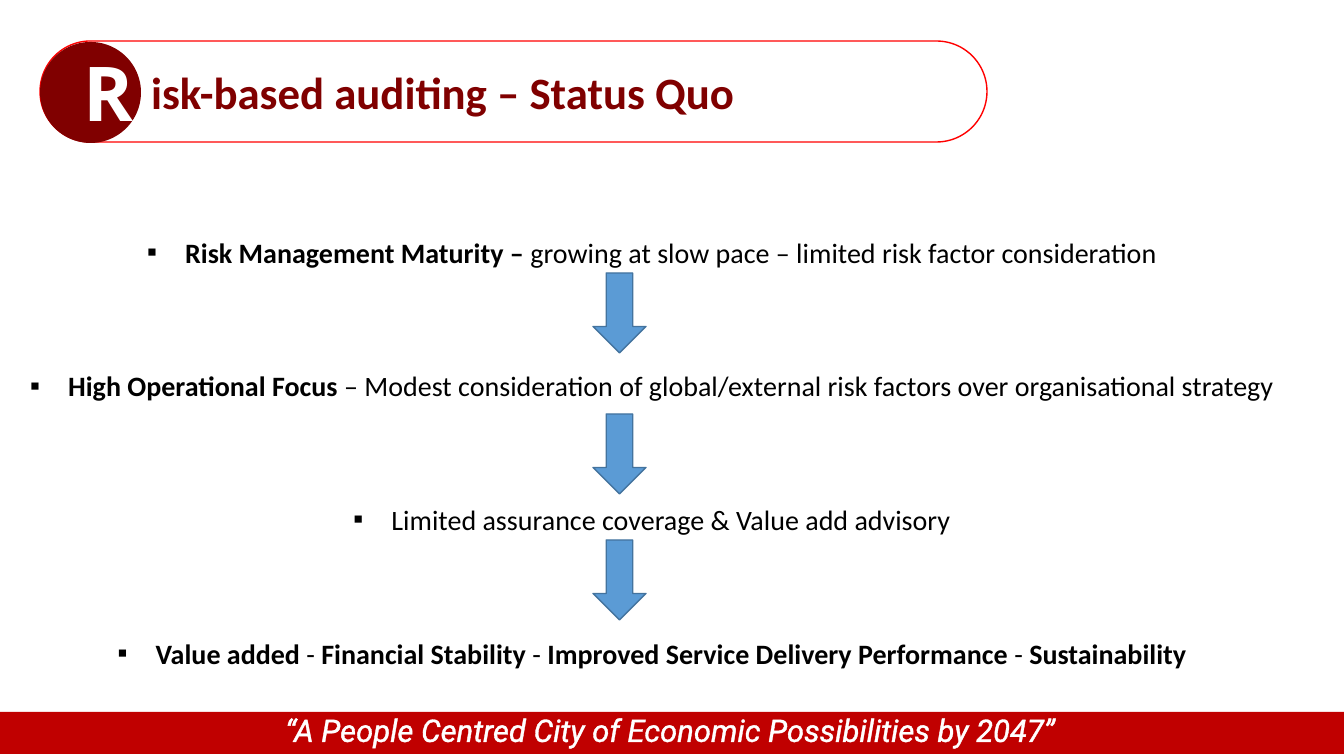
from lxml.etree import SubElement
from pptx import Presentation
from pptx.dml.color import RGBColor
from pptx.enum.shapes import MSO_SHAPE as Shape
from pptx.enum.text import MSO_ANCHOR as Anchor, MSO_AUTO_SIZE as Fit, PP_ALIGN as Align
from pptx.oxml import parse_xml
from pptx.oxml.ns import nsdecls, qn
from pptx.util import Pt

MAROON = RGBColor(0x80, 0, 0)
RED = RGBColor(0xFF, 0, 0)
BAND = RGBColor(0xC0, 0, 0)
BLUE = RGBColor(0x5B, 0x9B, 0xD5)
NAVY = RGBColor(0x43, 0x73, 0x9E)
WHITE = RGBColor(0xFF, 0xFF, 0xFF)
BLACK = RGBColor(0, 0, 0)


def px(*vals):
    return [round(v * 914400 / 100.8) for v in vals]


def draw(kind, box, fill=None, line=None):
    item = slide.shapes.add_shape(kind, *px(*box))
    item.shadow.inherit = False
    if fill is None:
        item.fill.background()
    else:
        item.fill.solid()
        item.fill.fore_color.rgb = fill
    if line is None:
        item.line.fill.background()
    else:
        item.line.color.rgb = line
        item.line.width = Pt(1)
    return item


deck = Presentation()
deck.slide_width, deck.slide_height = px(1344, 756)
slide = deck.slides.add_slide(deck.slide_layouts[1])
title, body = slide.placeholders

# Title pill with its initial
pill = draw(Shape.ROUNDED_RECTANGLE, (40, 41, 947, 101), line=RED)
pill.adjustments[0] = 0.5
draw(Shape.OVAL, (40, 42, 101, 101), fill=MAROON)
cap = slide.shapes.add_textbox(*px(74, 41, 52, 102)).text_frame
cap.word_wrap = True
cap.text = "R"
font = cap.paragraphs[0].font
font.name, font.size, font.bold = "Open Sans", Pt(54), True
font.color.rgb = WHITE

title.left, title.top, title.width, title.height = px(141, 59, 831, 65)
head = title.text_frame
head.auto_size = Fit.NONE
head.vertical_anchor = Anchor.MIDDLE
head.text = "isk-based auditing – Status Quo"
para = head.paragraphs[0]
para.alignment = Align.LEFT
font = para.font
font.name, font.size, font.bold = "Calibri", Pt(32), True
font.color.rgb = MAROON

# Steps: each is a list of (text, bold) runs
steps = [
    [("Risk Management Maturity – ", True),
     ("growing at slow pace – limited risk factor consideration", False)],
    [("High Operational Focus ", True),
     ("– Modest consideration of global/external risk factors "
      "over organisational strategy", False)],
    [("Limited assurance coverage & Value add advisory", False)],
    [("Value added ", True), ("- ", False), ("Financial Stability ", True),
     ("- ", False), ("Improved Service Delivery Performance ", True),
     ("- ", False), ("Sustainability", True)],
]
body.left, body.top, body.width, body.height = px(18, 230, 1268, 450)
frame = body.text_frame
frame.auto_size = Fit.NONE
frame.vertical_anchor = Anchor.TOP
indent, = px(38)
for i, step in enumerate(steps):
    para = frame.add_paragraph() if i else frame.paragraphs[0]
    props = para._p.get_or_add_pPr()
    props.set("marL", str(indent))
    props.set("indent", str(-indent))
    SubElement(props, qn("a:buFont")).set("typeface", "Calibri")
    SubElement(props, qn("a:buChar")).set("char", "▪")
    para.alignment = Align.CENTER
    para.space_before = Pt(71.5 if i else 0)
    para.space_after = Pt(0)
    font = para.font
    font.name, font.size = "Calibri", Pt(20)
    font.color.rgb = BLACK
    for text, bold in step:
        run = para.add_run()
        run.text = text
        run.font.bold = bold

# Footer band with outlined motto
band = draw(Shape.RECTANGLE, (-3, 712, 1347, 42), fill=BAND)
foot = band.text_frame
foot.vertical_anchor = Anchor.MIDDLE
foot.text = "“A People Centred City of Economic Possibilities by 2047”"
para = foot.paragraphs[0]
para.alignment = Align.CENTER
para.line_spacing = 0.8
font = para.font
font.name, font.size, font.italic = "Roboto", Pt(22.2), True
font.color.rgb = WHITE
edge = parse_xml(f'<a:ln {nsdecls("a")} w="13970"><a:solidFill>'
                 f'<a:srgbClr val="{WHITE}"/></a:solidFill></a:ln>')
para.runs[0]._r.get_or_add_rPr().insert(0, edge)

# Arrows between the steps
for top in (273, 414, 540):
    draw(Shape.DOWN_ARROW, (593, top, 53, 80), fill=BLUE, line=NAVY)

deck.save("out.pptx")
